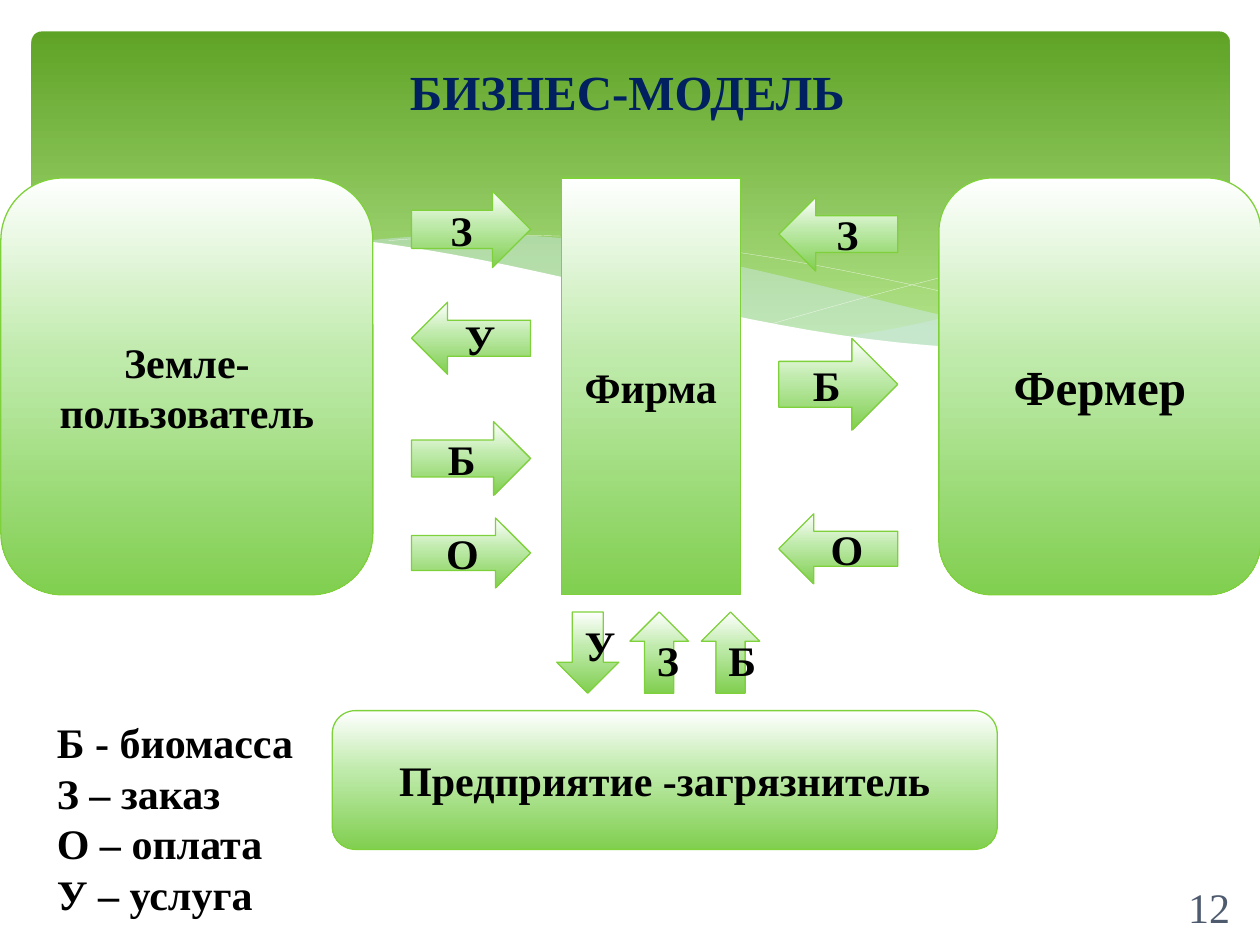
import math

import pptx
import pptx.dml.color
import pptx.enum.shapes
import pptx.enum.text
import pptx.oxml
import pptx.oxml.ns
import pptx.util

Pt = pptx.util.Pt
SHAPES = pptx.enum.shapes.MSO_SHAPE
ALIGN = pptx.enum.text.PP_ALIGN
ANCHOR = pptx.enum.text.MSO_ANCHOR
NAMESPACE = pptx.oxml.ns.nsdecls("a")

GREEN_BLEND = [(0, "FFFFFF"), (44, "BEEAAA"), (100, "81CF50")]
BANNER_BLEND = [(0, "5FA326"), (90, "B2E389")]
WHITE, PALE_BLUE = "FFFFFF", "D6ECFF"

# The letters on the arrows, explained in the legend
BIOMASS, ORDER, PAYMENT, SERVICE = "Б", "З", "О", "У"
LEGEND = [f"{BIOMASS} - биомасса", f"{ORDER} – заказ",
          f"{PAYMENT} – оплата", f"{SERVICE} – услуга"]


def color(value):
    return pptx.dml.color.RGBColor.from_string(value)


def write(shape, text, size=24, ink="000000", bold=True, align=ALIGN.CENTER,
          anchor=ANCHOR.MIDDLE):
    frame = shape.text_frame
    frame.word_wrap = True
    frame.vertical_anchor = anchor
    frame.text = text
    for para in frame.paragraphs:
        para.alignment = align
        for span in para.runs:
            span.font.name = "Times New Roman"
            span.font.size = Pt(size)
            span.font.bold = bold
            span.font.color.rgb = color(ink)


def blend(shape, stops):
    """Fill from top to bottom through (percent, colour) stops."""
    shape.fill.gradient()
    shape.fill.gradient_angle = 270
    stop_list = shape._element.spPr.find(".//" + pptx.oxml.ns.qn("a:gsLst"))
    for stop in list(stop_list):
        stop_list.remove(stop)
    for percent, value in stops:
        stop_list.append(pptx.oxml.parse_xml(
            f'<a:gs {NAMESPACE} pos="{percent * 1000}">'
            f'<a:srgbClr val="{value}"/></a:gs>'))


def add_block(page, kind, box, text, size=24):
    """A green party or arrow with centred text."""
    shape = page.shapes.add_shape(kind, *map(Pt, box))
    shape.shadow.inherit = False
    blend(shape, GREEN_BLEND)
    shape.line.color.rgb = color("7FD13B")
    shape.line.width = Pt(0.75)
    write(shape, text, size)


def add_label(page, box, text, **style):
    write(page.shapes.add_textbox(*map(Pt, box)), text, **style)


def cosine_points(start, end, crest, trough, steps=40):
    """Points from x = start to end on the cosine through crest and trough."""
    (crest_x, crest_y), (trough_x, trough_y) = crest, trough
    points = []
    for step in range(steps + 1):
        x = start + (end - start) * step / steps
        phase = math.pi * (x - crest_x) / (trough_x - crest_x)
        y = crest_y + (trough_y - crest_y) * (1 - math.cos(phase)) / 2
        points.append((x, y))
    return points


def add_outline(page, box, points, close):
    """A freeform whose points are measured from the corner of the box."""
    places = [(Pt(box[0] + x), Pt(box[1] + y)) for x, y in points]
    builder = page.shapes.build_freeform(*places[0])
    builder.add_line_segments(places[1:], close=close)
    outline = builder.convert_to_shape()
    outline.shadow.inherit = False
    return outline


def add_wave(page, box, crest_line, floor, fill, opacity):
    """Fill the area from a crest line down to a level floor."""
    corners = [(crest_line[-1][0], floor), (crest_line[0][0], floor)]
    wave = add_outline(page, box, crest_line + corners, close=True)
    wave.line.fill.background()
    wave.fill.solid()
    wave.fill.fore_color.rgb = color(fill)
    tint = wave._element.spPr.find(".//" + pptx.oxml.ns.qn("a:srgbClr"))
    tint.append(pptx.oxml.parse_xml(
        f'<a:alpha {NAMESPACE} val="{opacity * 1000}"/>'))


def add_hairline(page, box, points):
    hairline = add_outline(page, box, points, close=False)
    hairline.fill.background()
    hairline.line.color.rgb = color(WHITE)
    hairline.line.width = Pt(0.1)


def add_banner(page, box):
    panel = page.shapes.add_shape(SHAPES.ROUNDED_RECTANGLE, *map(Pt, box))
    panel.adjustments[0] = 0.03
    panel.shadow.inherit = False
    panel.line.fill.background()
    blend(panel, BANNER_BLEND)

    right_wave = cosine_points(458, 684, crest=(740, 118), trough=(420, 177))
    middle_wave = cosine_points(188, 625, crest=(255, 116), trough=(690, 185))
    falling_line = cosine_points(204, 635, crest=(275, 116.5),
                                 trough=(890, 210))
    rising_line = cosine_points(423, 684, crest=(720, 113), trough=(126, 221))
    white_wave = cosine_points(-1, 685, crest=(109, 114.5),
                               trough=(564, 181.4))

    # The white wave comes last and hides the floors of the tinted ones
    add_wave(page, box, right_wave, 182, PALE_BLUE, opacity=29)
    add_wave(page, box, middle_wave, 183, PALE_BLUE, opacity=40)
    add_hairline(page, box, falling_line)
    add_hairline(page, box, rising_line)
    add_wave(page, box, white_wave, 219, WHITE, opacity=100)


def add_title(page, box, text):
    title = page.shapes.title
    title.left, title.top, title.width, title.height = map(Pt, box)
    write(title, text, size=28, ink="002060")
    page.shapes._spTree.append(title._element)  # in front of the banner


def add_parties(page, box):
    """Three parties: at the left, at the right and between them."""
    left, top, width, height = box
    farmer_width = 184
    for kind, offset, part, name, size in [
            (SHAPES.ROUNDED_RECTANGLE, 0, 212.6, "Земле-пользователь", 24),
            (SHAPES.ROUNDED_RECTANGLE, width - farmer_width, farmer_width,
             "Фермер", 28),
            (SHAPES.RECTANGLE, 320.2, 102.4, "Фирма", 24)]:
        add_block(page, kind, (left + offset, top, part, height), name, size)


def add_side_flows(page, box, flows):
    """A column of arrows: (kind, centre below the top, height, letter)."""
    left, top, width, _ = box
    for kind, centre, height, letter in flows:
        arrow_top = top + centre - height / 2
        add_block(page, kind, (left, arrow_top, width, height), letter)


def add_polluter(page, box):
    """The polluter, with a row of arrows rising above its box."""
    left, top, _, _ = box
    add_block(page, SHAPES.ROUNDED_RECTANGLE, box, "Предприятие -загрязнитель")
    first_centre, pitch = 146, 40.8
    for index, (kind, width, letter) in enumerate([
            (SHAPES.DOWN_ARROW, 35.5, SERVICE),
            (SHAPES.UP_ARROW, 33.4, ORDER),
            (SHAPES.UP_ARROW, 33.4, BIOMASS)]):
        arrow_left = left + first_centre + index * pitch - width / 2
        add_block(page, kind, (arrow_left, top - 56.4, width, 46.4), letter)


def main():
    deck = pptx.Presentation()
    deck.slide_width, deck.slide_height = Pt(720), Pt(540)
    page = deck.slides.add_slide(deck.slide_layouts[5])

    # Heading
    add_banner(page, (18, 18, 684.7, 194.4))
    add_title(page, (82, 32, 553, 39.6), "БИЗНЕС-МОДЕЛЬ")

    # Parties and the flows between them
    top, height = 101.7, 238.2
    add_parties(page, (0.5, top, 720, height))
    to_right, to_left = SHAPES.RIGHT_ARROW, SHAPES.LEFT_ARROW
    add_side_flows(page, (235.2, top, 68, height), [
        (to_left, 91.6, 41.2, SERVICE), (to_right, 29.4, 43.6, ORDER),
        (to_right, 160.3, 42.2, BIOMASS), (to_right, 214.3, 40, PAYMENT)])
    add_side_flows(page, (445, top, 68, height), [
        (to_left, 32.1, 42.2, ORDER), (to_right, 117.9, 52.4, BIOMASS),
        (to_left, 211.9, 40, PAYMENT)])

    # Page number, polluter and legend
    add_label(page, (671.8, 496.6, 62.6, 43), "12", ink="4E5B6F", bold=False,
              align=ALIGN.LEFT)
    add_polluter(page, (189.9, 406.1, 380, 79.3))
    add_label(page, (25.4, 406.1, 164.2, 145.4), "\n".join(LEGEND),
              align=ALIGN.LEFT, anchor=ANCHOR.TOP)
    deck.save("out.pptx")


if __name__ == "__main__":
    main()
